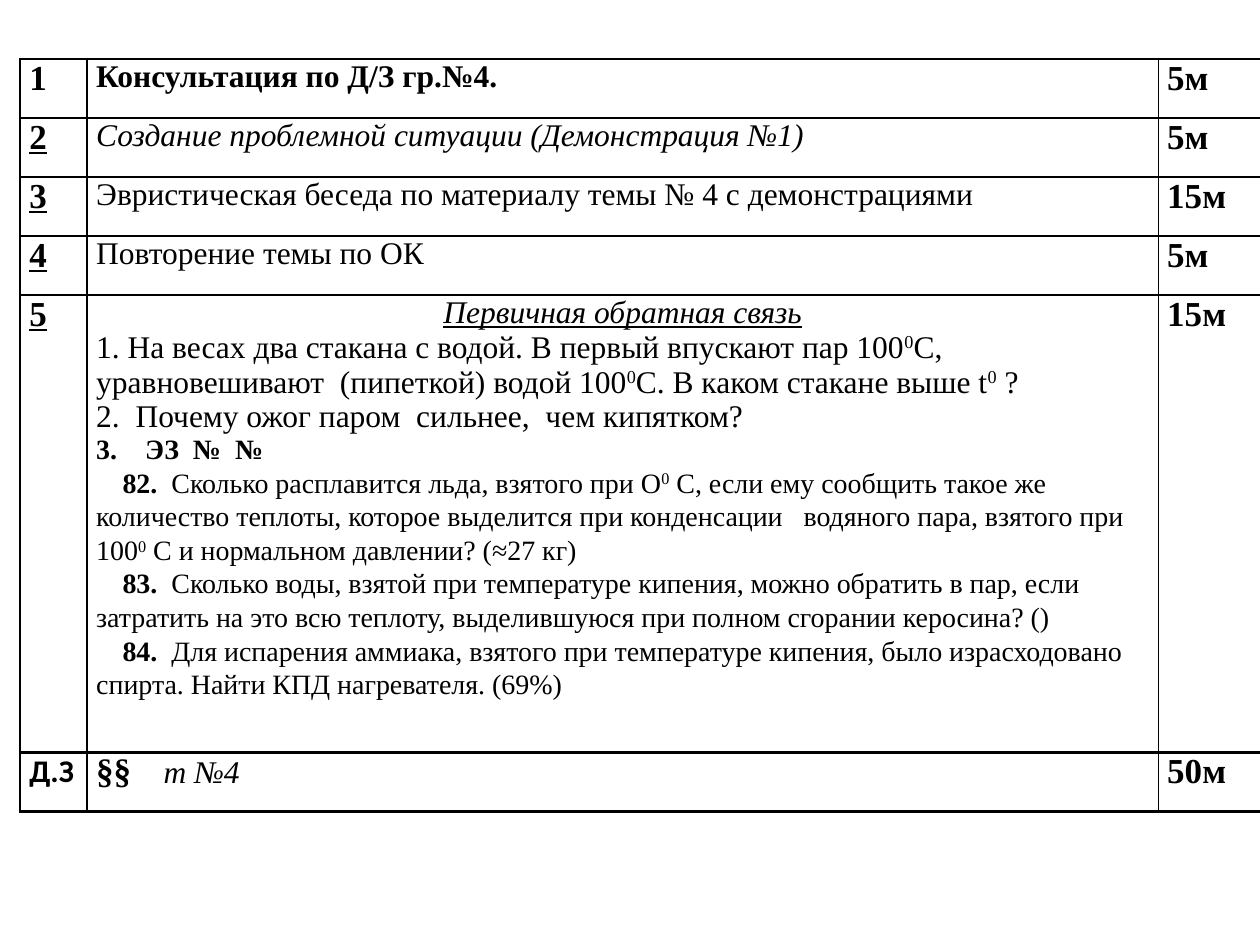
from dataclasses import dataclass

from lxml.etree import SubElement
from pptx import Presentation
from pptx.dml.color import RGBColor
from pptx.enum.text import PP_ALIGN
from pptx.oxml.ns import qn
from pptx.util import Cm, Pt


@dataclass(frozen=True)
class Theme:
    ink: str = "000000"
    paper: str = "FFFFFF"
    font: str = "Times New Roman"
    homework_font: str = "Calibri"
    large: int = 20
    normal: int = 18
    small: int = 16
    thin: float = 1
    thick: float = 1.5


theme = Theme()


def add_paragraph(cell, size, runs, first=False, font=theme.font):
    """Add runs of (text, style); style letters are b, i, u and ^ for superscript."""
    tf = cell.text_frame
    p = tf.paragraphs[0] if first else tf.add_paragraph()
    p.font.name = font
    p.font.size = Pt(size)
    p.font.color.rgb = RGBColor.from_string(theme.ink)
    for text, style in runs:
        r = p.add_run()
        r.text = text
        r.font.bold = "b" in style
        r.font.italic = "i" in style
        r.font.underline = "u" in style
        if "^" in style:
            r.font._element.set("baseline", "30000")
    return p


def set_borders(cell, widths):
    """Draw the left, right, top and bottom lines, widths in points."""
    tcPr = cell._tc.get_or_add_tcPr()
    for i, (side, width) in enumerate(zip("LRTB", widths)):
        ln = SubElement(tcPr, qn(f"a:ln{side}"), w=str(Pt(width)))
        fill = SubElement(ln, qn("a:solidFill"))
        SubElement(fill, qn("a:srgbClr"), val=theme.ink)
        tcPr.insert(i, ln)


# Number, topic runs, topic size, time
plan = [
    ("1", "b", [("Консультация по Д/З гр.№4.", "b")], "5м"),
    ("2", "bu", [("Создание проблемной ситуации (Демонстрация №1)", "i")], "5м"),
    ("3", "bu", [("Эвристическая беседа по материалу темы № 4 с демонстрациями", "")], "15м"),
    ("4", "bu", [("Повторение темы по ОК", "")], "5м"),
    ("5", "bu", [("Первичная обратная связь", "iu")], "15м"),
    ("Д.З", "b", [("§§ ", "b"), ("   т №4", "i")], "50м"),
]
questions = [
    (theme.normal, [
        ("1. На весах два стакана с водой. В первый впускают пар 100", ""), ("0", "^"),
        ("С,  уравновешивают  (пипеткой) водой 100", ""), ("0", "^"),
        ("С. В каком стакане выше t", ""), ("0", "^"), (" ?", "")]),
    (theme.normal, [("2.  Почему ожог паром  сильнее,  чем кипятком?", "")]),
    (theme.small, [("3.    ЭЗ  №  №", "b")]),
]
problems = [
    [("82.", "b"), ("  Сколько расплавится льда, взятого при О", ""), ("0", "^"),
     (" С, если ему сообщить такое же количество теплоты, которое выделится "
      "при конденсации   водяного пара, взятого при 100", ""), ("0", "^"),
     (" С и нормальном давлении? (≈27 кг)", "")],
    [("83.", "b"),
     ("  Сколько воды, взятой при температуре кипения, можно обратить в пар, "
      "если затратить на это всю теплоту, выделившуюся при полном сгорании "
      "керосина? ()", "")],
    [("84.  ", "b"),
     ("Для испарения аммиака, взятого при температуре кипения, было "
      "израсходовано спирта. Найти КПД нагревателя. (69%)", "")],
]

prs = Presentation()
prs.slide_width, prs.slide_height = Cm(25.4), Cm(19.05)
s = prs.slides.add_slide(prs.slide_layouts[6])

col_widths = [1.35, 21.59, 2.08]
row_heights = [1.19, 1.19, 1.19, 1.19, 9.22, 1.19]
table = s.shapes.add_table(len(row_heights), len(col_widths), Cm(0.41), Cm(1.19),
                           Cm(sum(col_widths)), Cm(sum(row_heights))).table
table.first_row = table.horz_banding = False
for column, width in zip(table.columns, col_widths):
    column.width = Cm(width)
for row, height in zip(table.rows, row_heights):
    row.height = Cm(height)

vertical = [theme.thick, theme.thick, theme.thin, theme.thin]
horizontal = [theme.thick] + [theme.thin] * 4 + [theme.thick] * 2
for i in range(len(row_heights)):
    for j in range(len(col_widths)):
        cell = table.cell(i, j)
        cell.margin_left = cell.margin_right = Cm(0.18)
        cell.margin_top = cell.margin_bottom = 0
        cell.fill.solid()
        cell.fill.fore_color.rgb = RGBColor.from_string(theme.paper)
        set_borders(cell, vertical[j:j + 2] + horizontal[i:i + 2])

for i, (number, style, topic, time) in enumerate(plan):
    homework = number == "Д.З"
    add_paragraph(table.cell(i, 0), theme.normal if homework else theme.large,
                  [(number, style)], True,
                  theme.homework_font if homework else theme.font)
    p = add_paragraph(table.cell(i, 1), theme.normal, topic, True)
    if homework:
        p.runs[0].font.size = Pt(theme.large)
    add_paragraph(table.cell(i, 2), theme.large, [(time, "b")], True)

feedback = table.cell(4, 1)
feedback.text_frame.paragraphs[0].alignment = PP_ALIGN.CENTER
for size, runs in questions:
    add_paragraph(feedback, size, runs)
for runs in problems:
    p = add_paragraph(feedback, theme.small, runs)
    p.line_spacing = 1.08
    pPr = p._p.get_or_add_pPr()
    pPr.set("marL", "0")
    pPr.set("indent", str(Cm(0.53)))

prs.save("out.pptx")
